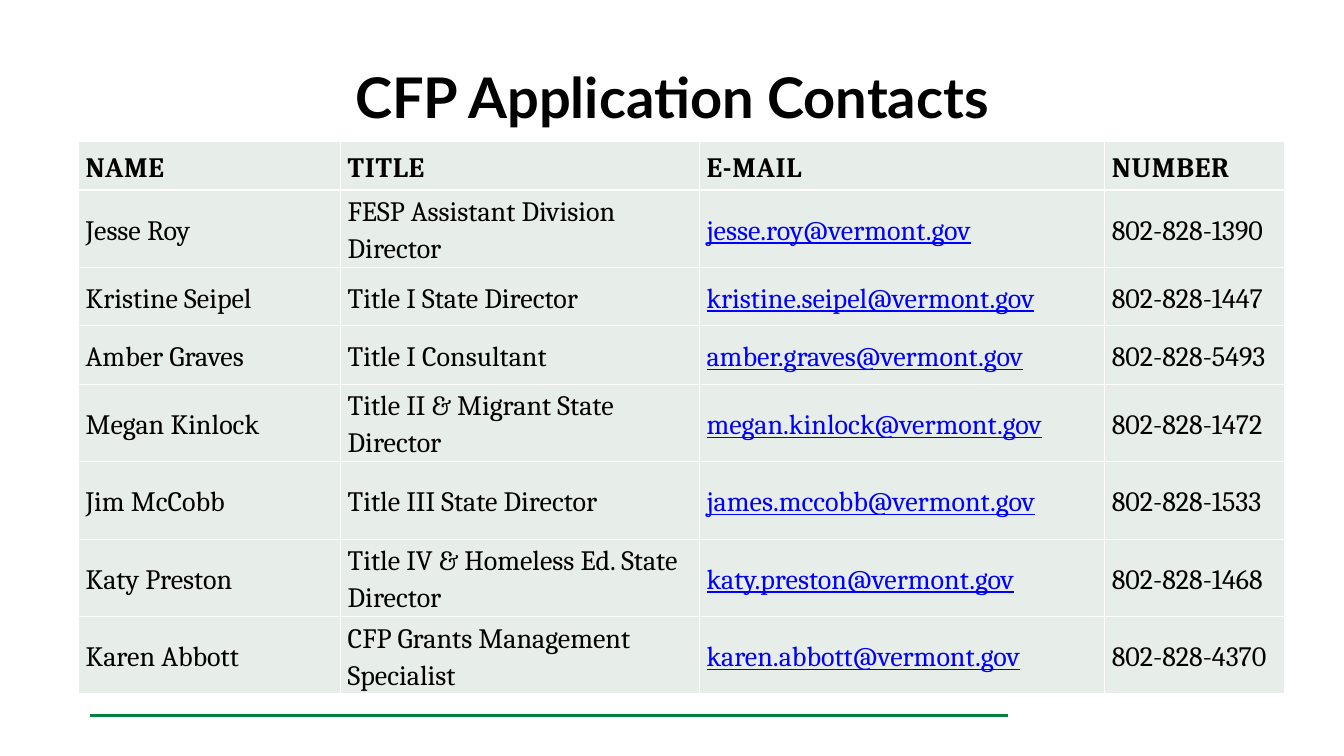
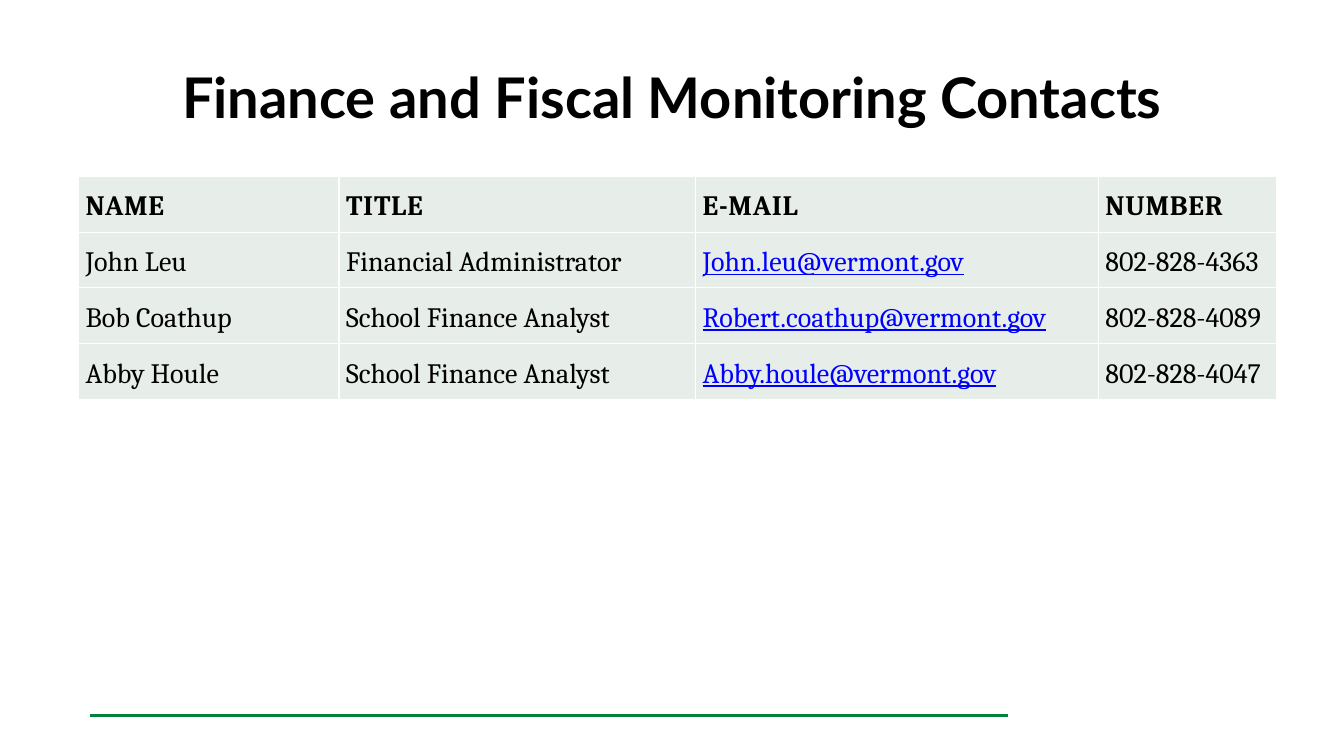
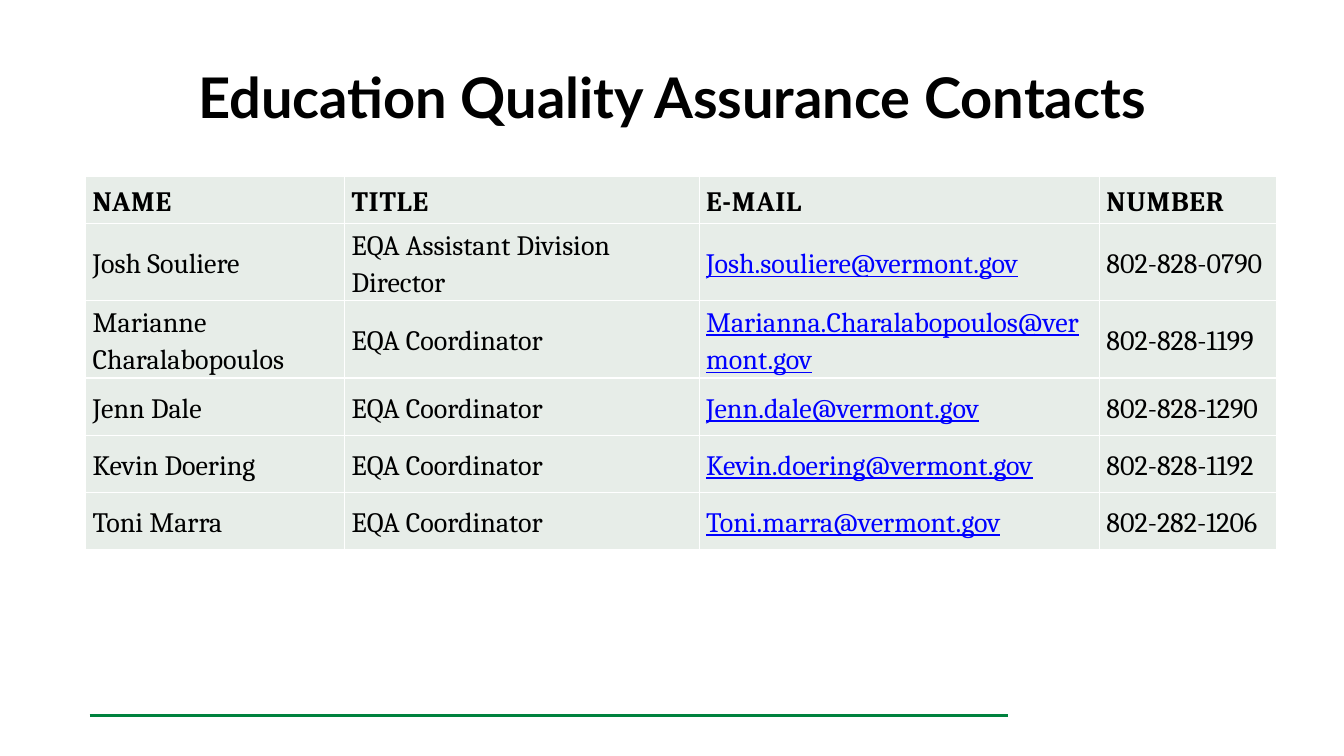
from dataclasses import dataclass

from lxml import etree
from pptx import Presentation
from pptx.dml.color import RGBColor
from pptx.enum.shapes import MSO_CONNECTOR
from pptx.enum.text import MSO_ANCHOR, PP_ALIGN
from pptx.oxml.ns import qn
from pptx.util import Inches, Pt

STRAIGHT = MSO_CONNECTOR.STRAIGHT
MIDDLE = MSO_ANCHOR.MIDDLE
CENTER = PP_ALIGN.CENTER


@dataclass(frozen=True)
class Theme:
    ink: str = "000000"
    link: str = "0000FF"
    rule: str = "00823E"
    cell: str = "E7EDE8"
    border: str = "FFFFFF"
    title_font: str = "Lato"
    table_font: str = "Cambria"
    title_size: int = 40
    table_size: int = 20
    rule_width: float = 2.25
    border_width: int = 1


T = Theme()

prs = Presentation()
prs.slide_width, prs.slide_height = Inches(13.33), Inches(7.5)
COLUMNS = 40  # square grid across the slide, 22.5 rows high
UNIT = prs.slide_width / COLUMNS

HEADER = ("NAME", "TITLE", "E-MAIL", "NUMBER")
COL_WEIGHTS = (2.6, 3.56, 4.02, 1.78)
EMAIL_COL = HEADER.index("E-MAIL")

# Positions, widths and row heights are in grid units.
SLIDES = [
    dict(
        title="CFP Application Contacts",
        left=2.34, top=4.2, width=35.88,
        heights=[1.46] + [1.74] * 4 + [2.31] + [1.74] * 2,
        contacts=[
            ("Jesse Roy", "FESP Assistant Division Director", "jesse.roy@vermont.gov", "802-828-1390"),
            ("Kristine Seipel", "Title I State Director", "kristine.seipel@vermont.gov", "802-828-1447"),
            ("Amber Graves", "Title I Consultant", "amber.graves@vermont.gov", "802-828-5493"),
            ("Megan Kinlock", "Title II & Migrant State Director", "megan.kinlock@vermont.gov", "802-828-1472"),
            ("Jim McCobb", "Title III State Director", "james.mccobb@vermont.gov", "802-828-1533"),
            ("Katy Preston", "Title IV & Homeless Ed. State Director", "katy.preston@vermont.gov", "802-828-1468"),
            ("Karen Abbott", "CFP Grants Management Specialist", "karen.abbott@vermont.gov", "802-828-4370"),
        ],
    ),
    dict(
        title="Finance and Fiscal Monitoring Contacts",
        left=2.34, top=5.25, width=35.66,
        heights=[1.66] * 4,
        contacts=[
            ("John Leu", "Financial Administrator", "John.leu@vermont.gov", "802-828-4363"),
            ("Bob Coathup", "School Finance Analyst", "Robert.coathup@vermont.gov", "802-828-4089"),
            ("Abby Houle", "School Finance Analyst", "Abby.houle@vermont.gov", "802-828-4047"),
        ],
    ),
    dict(
        title="Education Quality Assurance Contacts",
        left=2.55, top=5.25, width=35.45,
        heights=[1.4] + [1.7] * 5,
        contacts=[
            ("Josh Souliere", "EQA Assistant Division Director", "Josh.souliere@vermont.gov", "802-828-0790"),
            ("Marianne Charalabopoulos", "EQA Coordinator", "Marianna.Charalabopoulos@vermont.gov", "802-828-1199"),
            ("Jenn Dale", "EQA Coordinator", "Jenn.dale@vermont.gov", "802-828-1290"),
            ("Kevin Doering", "EQA Coordinator", "Kevin.doering@vermont.gov", "802-828-1192"),
            ("Toni Marra", "EQA Coordinator", "Toni.marra@vermont.gov", "802-282-1206"),
        ],
    ),
]


def grid(*units):
    return [round(u * UNIT) for u in units]


def style_cell(cell):
    """Set borders, fill, margins and anchor of a table cell."""
    tcPr = cell._tc.get_or_add_tcPr()
    for side in ("a:lnL", "a:lnR", "a:lnT", "a:lnB"):
        ln = etree.SubElement(tcPr, qn(side), w=str(Pt(T.border_width)))
        solid = etree.SubElement(ln, qn("a:solidFill"))
        etree.SubElement(solid, qn("a:srgbClr"), val=T.border)
    cell.fill.solid()
    cell.fill.fore_color.rgb = RGBColor.from_string(T.cell)
    cell.margin_left = cell.margin_right = Inches(0.07)
    cell.margin_top = cell.margin_bottom = 0
    cell.vertical_anchor = MIDDLE


for page in SLIDES:
    slide = prs.slides.add_slide(prs.slide_layouts[6])

    rule = slide.shapes.add_connector(STRAIGHT, *grid(2.67, 21.3, 30, 21.3))
    rule.line.color.rgb = RGBColor.from_string(T.rule)
    rule.line.width = Pt(T.rule_width)
    etree.SubElement(rule._element.spPr, qn("a:effectLst"))

    tf = slide.shapes.add_textbox(*grid(2, 1, 36, 3.75)).text_frame
    tf.word_wrap = True
    tf.vertical_anchor = MIDDLE
    p = tf.paragraphs[0]
    p.text = page["title"]
    p.alignment = CENTER
    p.font.name, p.font.size, p.font.bold = T.title_font, Pt(T.title_size), True
    p.font.color.rgb = RGBColor.from_string(T.ink)

    rows = [HEADER] + page["contacts"]
    heights = page["heights"]
    box = grid(page["left"], page["top"], page["width"], sum(heights))
    table = slide.shapes.add_table(len(rows), len(HEADER), *box).table
    table.first_row = table.horz_banding = False
    for column, weight in zip(table.columns, COL_WEIGHTS):
        column.width = round(box[2] * weight / sum(COL_WEIGHTS))

    for r, (values, height) in enumerate(zip(rows, heights)):
        table.rows[r].height = round(height * UNIT)
        is_header = r == 0
        for c, value in enumerate(values):
            cell = table.cell(r, c)
            style_cell(cell)
            is_email = c == EMAIL_COL and not is_header
            p = cell.text_frame.paragraphs[0]
            p.text = value
            p.line_spacing = 1.15
            p.font.name, p.font.size = T.table_font, Pt(T.table_size)
            p.font.bold, p.font.underline = is_header, is_email
            p.font.color.rgb = RGBColor.from_string(T.link if is_email else T.ink)
            if is_header:
                p.runs[0]._r.get_or_add_rPr().set("spc", "50")

prs.save("out.pptx")
